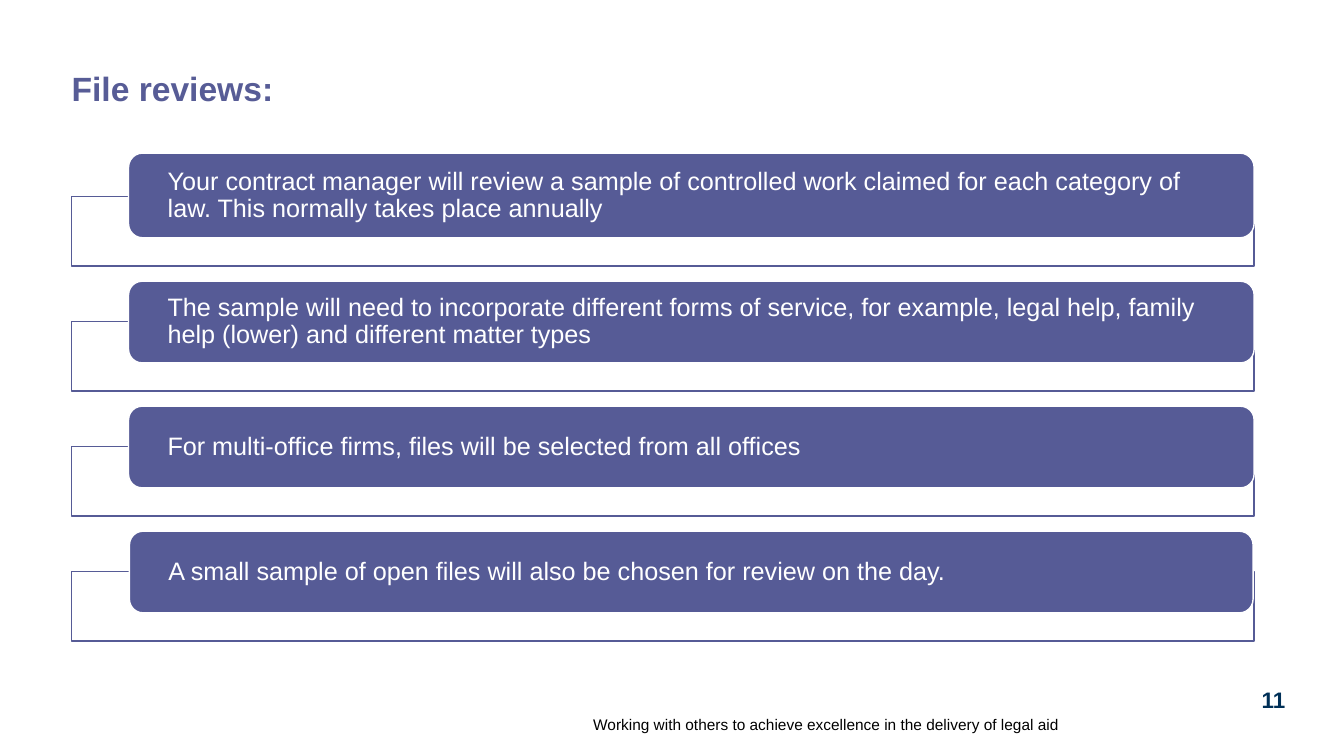
from pptx import Presentation
from pptx.dml.color import RGBColor
from pptx.enum.shapes import MSO_SHAPE
from pptx.enum.text import MSO_ANCHOR, PP_ALIGN
from pptx.util import Pt

PURPLE = "565B96"
WHITE = "FFFFFF"
REVIEWS = [
    ("Your contract manager will review a sample of controlled work claimed "
     "for each category of law. This normally takes place annually", 60.5, 0),
    ("The sample will need to incorporate different forms of service, for example, "
     "legal help, family help (lower) and different matter types", 58.3, 0),
    ("For multi-office firms, files will be selected from all offices", 58.3, 0),
    ("A small sample of open files will also be chosen for review on the day.", 58.3, 0.7),
]


def rgb(color):
    return RGBColor.from_string(color)


def write(sp, text, size, color, bold=False, align=PP_ALIGN.LEFT,
          anchor=MSO_ANCHOR.TOP, inset=0, spacing=1.0):
    tf = sp.text_frame
    tf.word_wrap = True
    tf.vertical_anchor = anchor
    tf.margin_left = tf.margin_right = Pt(inset)
    tf.margin_top = tf.margin_bottom = 0
    p = tf.paragraphs[0]
    p.alignment = align
    p.line_spacing = spacing
    r = p.add_run()
    r.text = text
    r.font.name = "Arial"
    r.font.size = Pt(size)
    r.font.bold = bold
    r.font.color.rgb = rgb(color)


def add_box(s, kind, x, y, w, h, fill, line):
    sp = s.shapes.add_shape(kind, Pt(x), Pt(y), Pt(w), Pt(h))
    sp.shadow.inherit = False
    sp.fill.solid()
    sp.fill.fore_color.rgb = rgb(fill)
    sp.line.color.rgb = rgb(line)
    sp.line.width = Pt(1)
    return sp


def add_label(s, x, y, w, h, text, **fmt):
    sp = s.shapes.add_textbox(Pt(x), Pt(y), Pt(w), Pt(h))
    write(sp, text, **fmt)


def add_title(s, x, y, w, h, text):
    sp = s.shapes.title
    sp.left, sp.top, sp.width, sp.height = Pt(x), Pt(y), Pt(w), Pt(h)
    write(sp, text, size=24, color="575C96", bold=True, spacing=0.9)


def add_reviews(s, x, y, w, reviews, step=89.28, frame_h=49.7, overlap=29.5, indent=40.6):
    for i, (text, pill_h, trim) in enumerate(reviews):
        top = y + i * step
        add_box(s, MSO_SHAPE.RECTANGLE, x, top, w, frame_h, WHITE, PURPLE)
        pill = add_box(s, MSO_SHAPE.ROUNDED_RECTANGLE, x + indent + trim,
                       top + overlap - pill_h, w - indent - 2 * trim, pill_h, PURPLE, WHITE)
        write(pill, text, size=18, color=WHITE, anchor=MSO_ANCHOR.MIDDLE,
              inset=25, spacing=0.9)


def add_footer(s, x, y, w, h, text, number):
    add_label(s, x, y, w, h, text, size=11, color="000000",
              align=PP_ALIGN.RIGHT, anchor=MSO_ANCHOR.BOTTOM)
    add_label(s, x + w + 139, y - 8, 28, 20, number, size=16, color="003057",
              bold=True, align=PP_ALIGN.CENTER)


def main():
    prs = Presentation()
    prs.slide_width, prs.slide_height = Pt(960), Pt(540)
    s = prs.slides.add_slide(prs.slide_layouts[5])
    add_footer(s, 41, 498.3, 715.7, 26,
               "Working with others to achieve excellence in the delivery of legal aid", "11")
    add_title(s, 51.2, 51.8, 867, 27.4, "File reviews:")
    add_reviews(s, 51.2, 140.4, 844.6, REVIEWS)
    prs.save("out.pptx")


if __name__ == "__main__":
    main()
